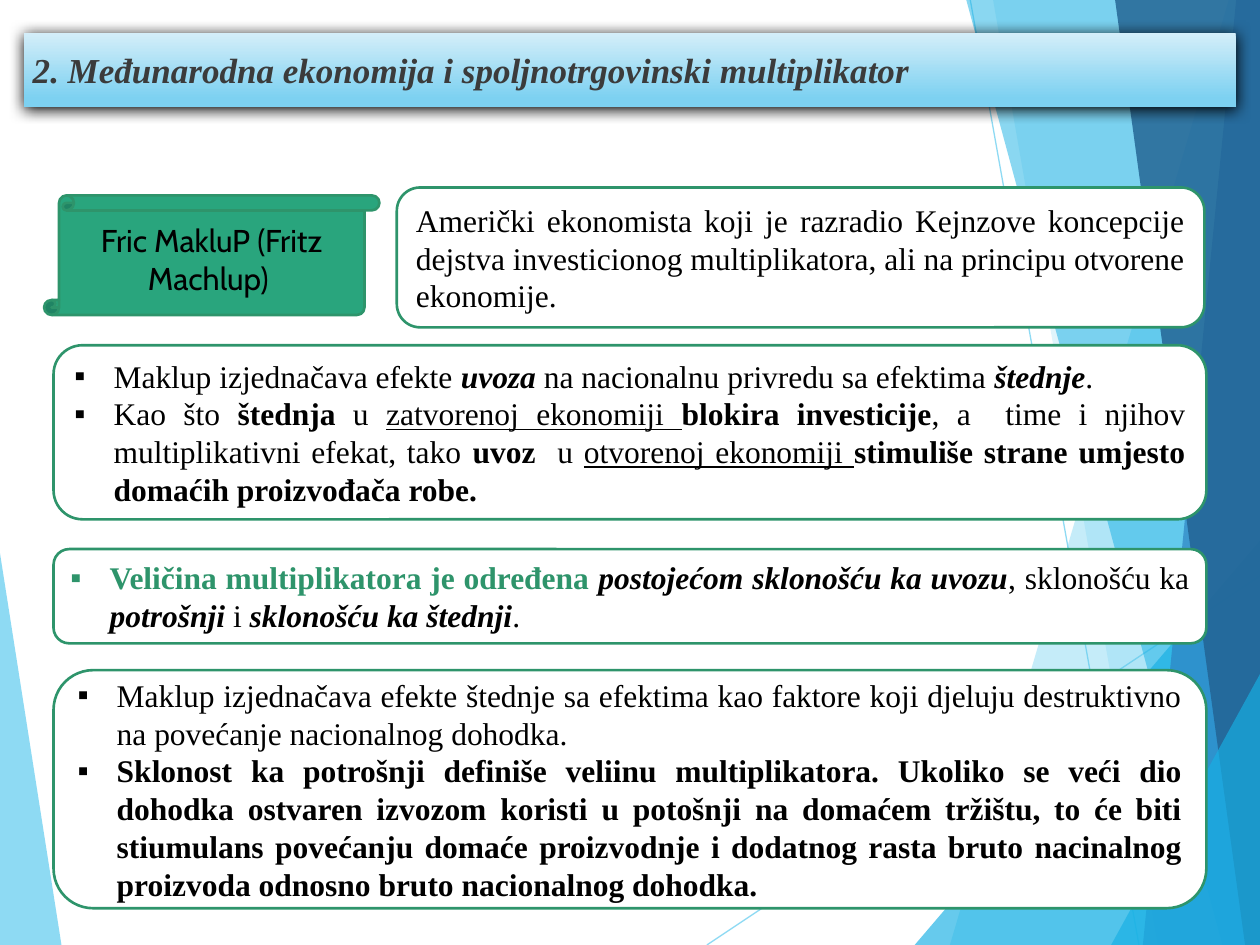
from dataclasses import dataclass

from lxml import etree
from pptx import Presentation
from pptx.dml.color import RGBColor
from pptx.enum.shapes import MSO_CONNECTOR, MSO_SHAPE
from pptx.enum.text import MSO_ANCHOR, MSO_AUTO_SIZE, PP_ALIGN
from pptx.oxml import parse_xml
from pptx.oxml.ns import nsdecls, qn
from pptx.util import Cm, Pt

STRAIGHT = MSO_CONNECTOR.STRAIGHT
SCROLL = MSO_SHAPE.VERTICAL_SCROLL
MIDDLE = MSO_ANCHOR.MIDDLE
NO_FIT = MSO_AUTO_SIZE.NONE
LEFT, CENTER, JUSTIFY = PP_ALIGN.LEFT, PP_ALIGN.CENTER, PP_ALIGN.JUSTIFY
COMPARISON_LAYOUT = 4  # a title and four text placeholders


@dataclass(frozen=True)
class Theme:
    serif: str = "Times New Roman"
    sans: str = "Cabin"
    title_size: float = 20
    text_size: float = 18
    line_pitch: float = 21.6
    outline: float = 1.5
    hairline: float = 0.75
    text: str = "000000"
    title: str = "3B3B3B"
    paper: str = "FFFFFF"
    green: str = "2E946B"
    scroll: str = "29A57D"
    bar_top: str = "D4EEF9"
    bar_bottom: str = "7DD1F1"
    sky: str = "5FCBEF"
    cyan: str = "17B0E4"
    blue: str = "2E83C3"
    navy: str = "226292"


THEME = Theme()
WIDTH, HEIGHT = 25.4, 19.05
LIST_LEFT, LIST_WIDTH = 1.08, 23.24

# colour, opacity in percent, corners in cm
FACETS_LEFT = [(THEME.sky, 70, [(0, 11.15), (1.24, HEIGHT), (0, HEIGHT)])]
FACETS_RIGHT = [
    (THEME.sky, 36, [(24.77, 0), (19.15, HEIGHT), (WIDTH, HEIGHT), (WIDTH, 0)]),
    (THEME.sky, 20, [(20.02, 0), (23.34, HEIGHT), (WIDTH, HEIGHT), (WIDTH, 0)]),
    (THEME.cyan, 66, [(18.44, HEIGHT), (WIDTH, 10.9), (WIDTH, HEIGHT)]),
    (THEME.cyan, 50, [(19.48, 0), (24.64, HEIGHT), (WIDTH, HEIGHT), (WIDTH, 0)]),
    (THEME.blue, 70, [(24.92, 0), (23.04, HEIGHT), (WIDTH, HEIGHT), (WIDTH, 0)]),
    (THEME.navy, 82, [(22.48, 0), (25.1, HEIGHT), (WIDTH, HEIGHT), (WIDTH, 0)]),
    (THEME.cyan, 66, [(22.4, HEIGHT), (WIDTH, 13.59), (WIDTH, HEIGHT)]),
]
RAYS = [(14.25, HEIGHT, WIDTH, 11.61), (19.56, 0, 22.96, HEIGHT)]

# Each span is (wording, marks): b bold, i italic, u underlined, g green
TITLE = [("2. Međunarodna ekonomija i spoljnotrgovinski multiplikator", "bi")]
NAME = [("Fric MakluP (Fritz Machlup) ", "")]
INTRO = [[("Američki ekonomista koji je razradio Kejnzove koncepcije dejstva "
           "investicionog multiplikatora, ali na principu otvorene ekonomije.", "")]]
IMPORTS = [
    [("Maklup izjednačava efekte ", ""), ("uvoza", "bi"),
     (" na nacionalnu privredu sa efektima ", ""), ("štednje", "bi"), (".", "")],
    [("Kao što ", ""), ("štednja", "b"), (" u ", ""),
     ("zatvorenoj ekonomiji ", "u"), ("blokira investicije", "b"),
     (", a  time i njihov multiplikativni efekat, tako ", ""), ("uvoz", "b"),
     ("  u ", ""), ("otvorenoj ekonomiji ", "u"),
     ("stimuliše strane umjesto domaćih proizvođača robe.", "b")],
]
SIZE_RULE = [
    [("Veličina multiplikatora je određena ", "bg"),
     ("postojećom sklonošću ka uvozu", "bi"), (", sklonošću ka ", ""),
     ("potrošnji", "bi"), (" i ", ""), ("sklonošću ka štednji", "bi"), (".", "")],
]
INCOME = [
    [("Maklup izjednačava efekte štednje sa efektima kao faktore koji djeluju "
      "destruktivno na povećanje nacionalnog dohodka.", "")],
    [("Sklonost ka potrošnji definiše veliinu multiplikatora. Ukoliko se veći dio "
      "dohodka ostvaren izvozom koristi u potošnji na domaćem tržištu, to će biti "
      "stiumulans povećanju domaće proizvodnje i dodatnog rasta bruto nacinalnog "
      "proizvoda odnosno bruto nacionalnog dohodka.", "b")],
]


def rgb(code):
    return RGBColor.from_string(code)


def set_opacity(shape, percent):
    for color in shape._element.spPr.iter(qn("a:srgbClr")):
        etree.SubElement(color, qn("a:alpha"), val=str(percent * 1000))


def add_facet(page, color, opacity, corners):
    points = [(Cm(x), Cm(y)) for x, y in corners]
    builder = page.shapes.build_freeform(*points[0])
    builder.add_line_segments(points[1:])
    facet = builder.convert_to_shape()
    facet.shadow.inherit = False
    facet.fill.solid()
    facet.fill.fore_color.rgb = rgb(color)
    facet.line.fill.background()
    set_opacity(facet, opacity)


def add_ray(page, ends):
    ray = page.shapes.add_connector(STRAIGHT, *map(Cm, ends))
    ray.line.color.rgb = rgb(THEME.sky)
    ray.line.width = Pt(THEME.hairline)
    set_opacity(ray, 70)
    etree.SubElement(ray._element.spPr, qn("a:effectLst"))


def place_rounded(page, box, area):
    """Bring a placeholder to the front as a rounded rectangle."""
    page.shapes._spTree.append(box._element)
    box.left, box.top, box.width, box.height = map(Cm, area)
    box._element.spPr.append(parse_xml(
        f'<a:prstGeom {nsdecls("a")} prst="roundRect"><a:avLst/></a:prstGeom>'))


def paint(shape, fill):
    shape.fill.solid()
    shape.fill.fore_color.rgb = rgb(fill)
    shape.line.color.rgb = rgb(THEME.green)
    shape.line.width = Pt(THEME.outline)


def set_frame(frame, side=0.25, edge=0.13):
    frame.word_wrap = True
    frame.auto_size = NO_FIT
    frame.vertical_anchor = MIDDLE
    frame.margin_left = frame.margin_right = Cm(side)
    frame.margin_top = frame.margin_bottom = Cm(edge)


def write_para(para, spans, align, font=THEME.serif, size=THEME.text_size,
               color=THEME.text):
    para.alignment = align
    para.space_before = para.space_after = Pt(0)
    for wording, marks in spans:
        span = para.add_run()
        span.text = wording
        span.font.name = font
        span.font.size = Pt(size)
        span.font.bold = "b" in marks
        span.font.italic = "i" in marks
        span.font.underline = "u" in marks
        span.font.color.rgb = rgb(THEME.green if "g" in marks else color)


def set_bullet(para):
    props = para._p.get_or_add_pPr()
    props.set("marL", str(Cm(0.79)))
    props.set("indent", str(Cm(-0.79)))
    etree.SubElement(props, qn("a:buChar"), char="▪")


def fill_title(page):
    bar = page.shapes.title
    place_rounded(page, bar, (0.48, 0.66, 24.43, 1.5))
    bar.fill.gradient()
    bar.fill.gradient_angle = 270
    stops = zip(bar.fill.gradient_stops, (THEME.bar_top, THEME.bar_bottom), (0, 0.88))
    for stop, color, position in stops:
        stop.color.rgb = rgb(color)
        stop.position = position
    bar._element.spPr.append(parse_xml(
        f'<a:effectLst {nsdecls("a")}><a:outerShdw blurRad="{Pt(8.5)}" '
        f'dist="{Pt(1)}" dir="5400000" rotWithShape="0">'
        '<a:srgbClr val="000000"/></a:outerShdw></a:effectLst>'))
    set_frame(bar.text_frame, 0.18, 0.1)
    write_para(bar.text_frame.paragraphs[0], TITLE, LEFT,
               size=THEME.title_size, color=THEME.title)


def fill_body(page, index, area, paras, bulleted=True):
    box = page.placeholders[index]
    place_rounded(page, box, area)
    paint(box, THEME.paper)
    frame = box.text_frame
    set_frame(frame)
    for number, spans in enumerate(paras):
        para = frame.add_paragraph() if number else frame.paragraphs[0]
        para.line_spacing = Pt(THEME.line_pitch)
        write_para(para, spans, JUSTIFY)
        if bulleted:
            set_bullet(para)


def add_name_scroll(page):
    scroll = page.shapes.add_shape(SCROLL, Cm(0.89), Cm(3.94), Cm(6.76), Cm(2.41))
    scroll.shadow.inherit = False
    paint(scroll, THEME.scroll)
    set_frame(scroll.text_frame)
    write_para(scroll.text_frame.paragraphs[0], NAME, CENTER, font=THEME.sans)


def main():
    deck = Presentation()
    deck.slide_width, deck.slide_height = Cm(WIDTH), Cm(HEIGHT)
    page = deck.slides.add_slide(deck.slide_layouts[COMPARISON_LAYOUT])
    for facet in FACETS_LEFT:
        add_facet(page, *facet)
    for ends in RAYS:
        add_ray(page, ends)
    for facet in FACETS_RIGHT:
        add_facet(page, *facet)
    fill_title(page)
    fill_body(page, 1, (8, 3.78, 16.28, 2.82), INTRO, bulleted=False)
    add_name_scroll(page)
    lists = [(6.96, 3.51, IMPORTS), (11.07, 1.9, SIZE_RULE), (13.51, 4.8, INCOME)]
    for index, (top, height, paras) in enumerate(lists, start=2):
        fill_body(page, index, (LIST_LEFT, top, LIST_WIDTH, height), paras)
    deck.save("out.pptx")


if __name__ == "__main__":
    main()
